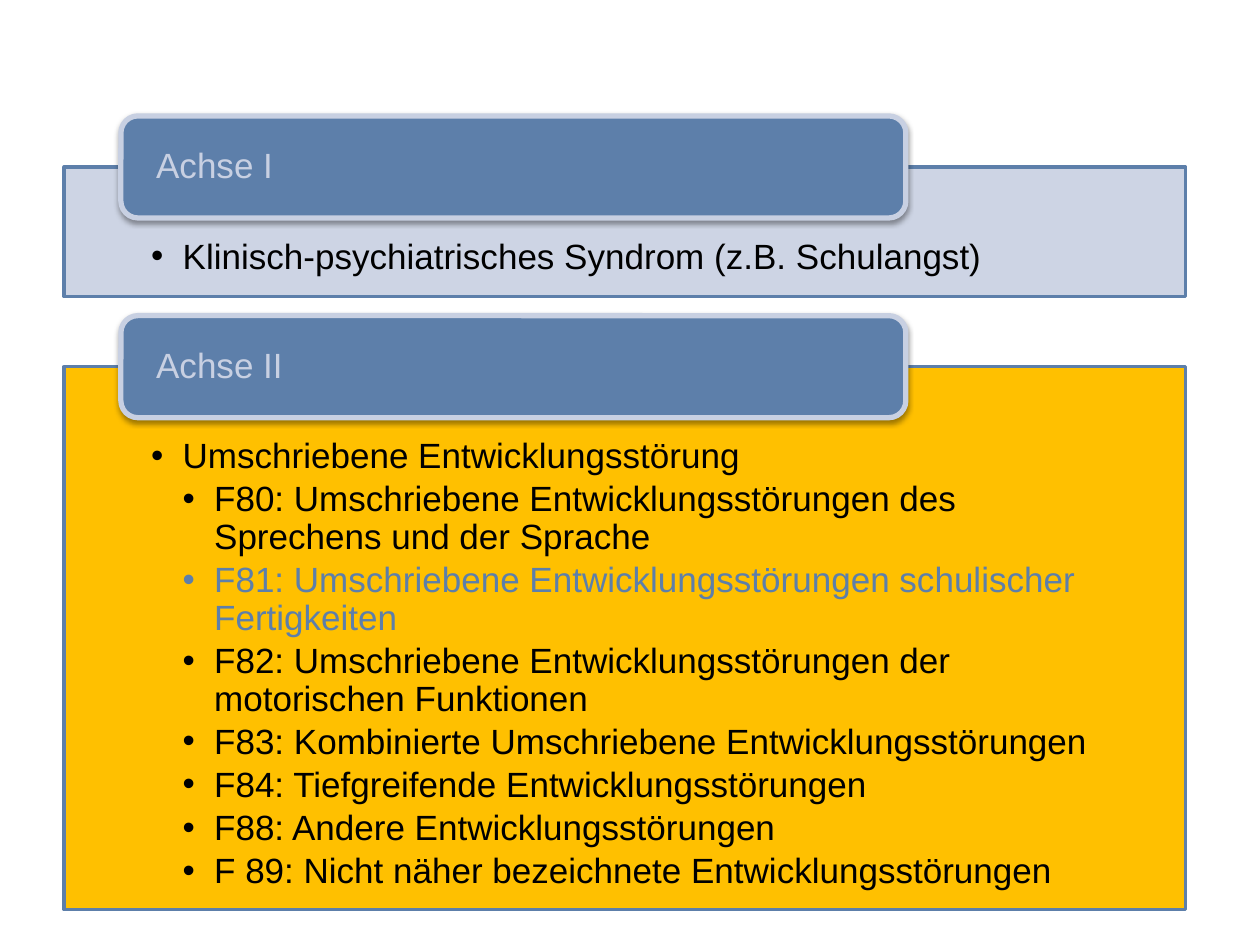
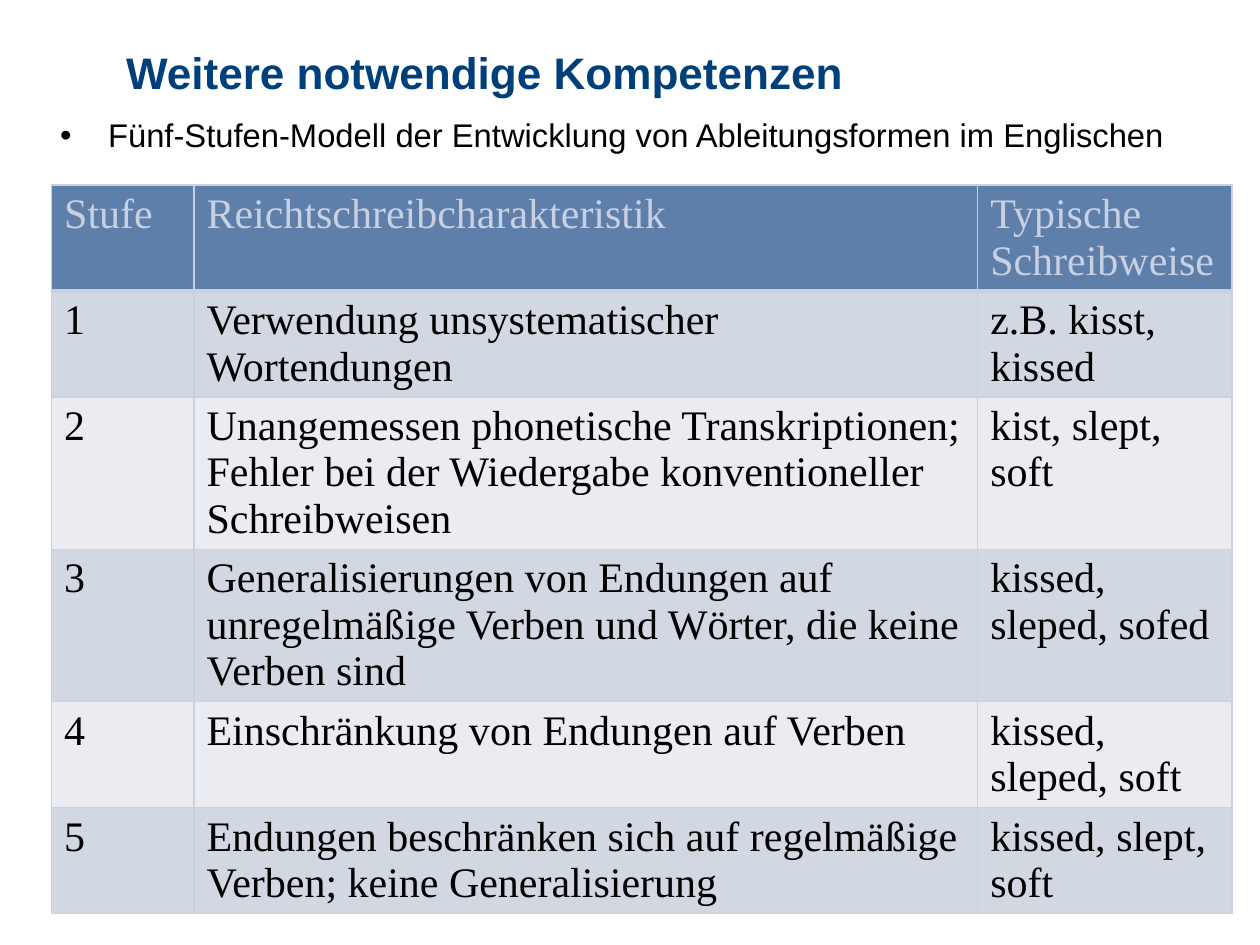
from lxml.etree import SubElement
from pptx import Presentation
from pptx.dml.color import RGBColor
from pptx.enum.shapes import MSO_SHAPE as Preset
from pptx.enum.text import MSO_ANCHOR as Anchor, MSO_AUTO_SIZE as AutoSize, PP_ALIGN as Align
from pptx.oxml import parse_xml
from pptx.oxml.ns import nsdecls, qn
from pptx.util import Inches, Pt

BLUE, PALE, GOLD, NAVY, BLACK = "5D7FAA", "C8D0E2", "FFC000", "00407A", "000000"
ROW_FILLS = ("D2D8E2", "EAECF1")
SANS, SERIF = "Arial", "Times New Roman"
COLUMNS, ROWS = 100, 75  # grid over the whole slide


def colour(value):
    return RGBColor.from_string(value)


class Deck:
    """Holds the style, the grid and the current slide."""

    def __init__(self):
        self.presentation = Presentation()
        self.presentation.slide_width = Inches(10)
        self.presentation.slide_height = Inches(7.5)
        self.slide = None

    def new_slide(self, layout):
        self.slide = self.presentation.slides.add_slide(self.presentation.slide_layouts[layout])

    def across(self, columns):
        return round(self.presentation.slide_width * columns / COLUMNS)

    def down(self, rows):
        return round(self.presentation.slide_height * rows / ROWS)

    def area(self, left, top, width, height):
        return self.across(left), self.down(top), self.across(width), self.down(height)

    def frame(self, holder, insets, anchor):
        """Set up a text frame; insets are left, top, right, bottom in grid units."""
        frame = holder.text_frame
        frame.word_wrap = True
        frame.auto_size = AutoSize.NONE
        frame.vertical_anchor = anchor
        left, top, right, bottom = insets
        frame.margin_left, frame.margin_right = self.across(left), self.across(right)
        frame.margin_top, frame.margin_bottom = self.down(top), self.down(bottom)
        return frame

    def add_text(self, paragraph, text, size, ink=BLACK, font=SANS, bold=False):
        paragraph.alignment = Align.LEFT
        run = paragraph.add_run()
        run.text = text
        run.font.name, run.font.size, run.font.bold = font, Pt(size), bold
        run.font.color.rgb = colour(ink)

    def bullet(self, paragraph, indent, hang):
        properties = paragraph._p.get_or_add_pPr()
        properties.set("marL", str(self.across(indent)))
        properties.set("indent", str(-self.across(hang)))
        SubElement(properties, qn("a:buFont")).set("typeface", SANS)
        SubElement(properties, qn("a:buChar")).set("char", "•")

    def shape(self, preset, area, fill, line, line_width):
        shape = self.slide.shapes.add_shape(preset, *self.area(*area))
        shape.shadow.inherit = False
        shape.fill.solid()
        shape.fill.fore_color.rgb = colour(fill)
        shape.line.color.rgb = colour(line)
        shape.line.width = Pt(line_width)
        return shape

    def panel(self, top, height, fill, items, opacity=100):
        """Draw a framed list of (level, text, ink) items."""
        shape = self.shape(Preset.RECTANGLE, (5.1, top, 89, height), fill, BLUE, 2)
        if opacity < 100:
            solid = shape._element.spPr.find(qn("a:solidFill"))
            SubElement(solid[0], qn("a:alpha")).set("val", str(opacity * 1000))
        frame = self.frame(shape, (6.9, 5.7, 6.9, 1.6), Anchor.TOP)
        for index, (level, text, ink) in enumerate(items):
            paragraph = frame.add_paragraph() if index else frame.paragraphs[0]
            self.bullet(paragraph, 2.5 * level, 2.5)
            paragraph.line_spacing = 0.9
            paragraph.space_after = Pt(3)
            self.add_text(paragraph, text, 20, ink)

    def tab(self, top, height, text):
        shape = self.shape(Preset.ROUNDED_RECTANGLE, (9.6, top, 62.3, height), BLUE, PALE, 3)
        effects = shape._element.spPr.find(qn("a:effectLst"))
        effects.append(parse_xml(
            f'<a:outerShdw {nsdecls("a")} blurRad="{Pt(3.1)}" dist="{Pt(1.6)}" dir="5400000"'
            f' rotWithShape="0"><a:srgbClr val="{BLACK}"><a:alpha val="38000"/>'
            '</a:srgbClr></a:outerShdw>'))
        frame = self.frame(shape, (2.4, 0, 2.4, 0), Anchor.MIDDLE)
        frame.paragraphs[0].line_spacing = 0.9
        self.add_text(frame.paragraphs[0], text, 20, PALE)

    def title(self, text, area):
        title = self.slide.shapes.title
        title.left, title.top, title.width, title.height = self.area(*area)
        frame = self.frame(title, (1, 0.5, 1, 0.5), Anchor.MIDDLE)
        self.add_text(frame.paragraphs[0], text, 25.2, NAVY, bold=True)

    def lead(self, text, area):
        box = self.slide.shapes.add_textbox(*self.area(*area))
        paragraph = self.frame(box, (1, 0.5, 1, 0.5), Anchor.MIDDLE).paragraphs[0]
        self.bullet(paragraph, 3.8, 3.8)
        self.add_text(paragraph, text, 18.7)

    def borders(self, cell, bottom_width):
        properties = cell._tc.get_or_add_tcPr()
        widths = {"lnL": 1, "lnR": 1, "lnT": 1, "lnB": bottom_width}
        for index, (side, width) in enumerate(widths.items()):
            properties.insert(index, parse_xml(
                f'<a:{side} {nsdecls("a")} w="{Pt(width)}"><a:solidFill>'
                f'<a:srgbClr val="{PALE}"/></a:solidFill></a:{side}>'))

    def table(self, left, top, widths, heights, records):
        area = self.area(left, top, sum(widths), sum(heights))
        table = self.slide.shapes.add_table(len(records), len(widths), *area).table
        for column, width in zip(table.columns, widths):
            column.width = self.across(width)
        for index, (row, height, record) in enumerate(zip(table.rows, heights, records)):
            row.height = self.down(height)
            header = index == 0
            for cell, text in zip(row.cells, record):
                cell.fill.solid()
                cell.fill.fore_color.rgb = colour(BLUE if header else ROW_FILLS[(index - 1) % 2])
                self.borders(cell, 3 if header else 1)
                self.add_text(cell.text_frame.paragraphs[0], text, 24,
                              PALE if header else BLACK, SERIF)


# Content: name, panel height, fill, opacity and list of each axis
AXES = [
    ("Achse I", 10.3, PALE, 90, [
        (1, "Klinisch-psychiatrisches Syndrom (z.B. Schulangst)", BLACK),
    ]),
    ("Achse II", 43.1, GOLD, 100, [
        (1, "Umschriebene Entwicklungsstörung", BLACK),
        (2, "F80: Umschriebene Entwicklungsstörungen des Sprechens und der Sprache", BLACK),
        (2, "F81: Umschriebene Entwicklungsstörungen schulischer Fertigkeiten", BLUE),
        (2, "F82: Umschriebene Entwicklungsstörungen der motorischen Funktionen", BLACK),
        (2, "F83: Kombinierte Umschriebene Entwicklungsstörungen", BLACK),
        (2, "F84: Tiefgreifende Entwicklungsstörungen", BLACK),
        (2, "F88: Andere Entwicklungsstörungen", BLACK),
        (2, "F 89: Nicht näher bezeichnete Entwicklungsstörungen", BLACK),
    ]),
]

# Content: table of stages, with the text lines each row holds
STAGES = [
    ("Stufe", "Reichtschreibcharakteristik", "Typische Schreibweise"),
    ("1", "Verwendung unsystematischer Wortendungen", "z.B. kisst, kissed"),
    ("2", "Unangemessen phonetische Transkriptionen; Fehler bei der Wiedergabe "
          "konventioneller Schreibweisen", "kist, slept, soft"),
    ("3", "Generalisierungen von Endungen auf unregelmäßige Verben und Wörter, "
          "die keine Verben sind", "kissed, sleped, sofed"),
    ("4", "Einschränkung von Endungen auf Verben", "kissed, sleped, soft"),
    ("5", "Endungen beschränken sich auf regelmäßige Verben; keine Generalisierung",
     "kissed, slept, soft"),
]
STAGE_LINES = (2, 2, 3, 3, 2, 2)


def axes_slide(deck):
    deck.new_slide(6)
    tab_top, tab_height, gap = 9.2, 8.1, 1.5
    for name, height, fill, opacity, items in AXES:
        panel_top = tab_top + tab_height / 2  # the tab straddles the panel's top edge
        deck.panel(panel_top, height, fill, items, opacity)
        deck.tab(tab_top, tab_height, name)
        tab_top = panel_top + height + gap


def stages_slide(deck):
    deck.new_slide(5)
    deck.title("Weitere notwendige Kompetenzen", (9, 3.1, 82.5, 5.2))
    deck.lead("Fünf-Stufen-Modell der Entwicklung von Ableitungsformen im Englischen",
              (3.8, 8.4, 93.4, 4.6))
    heights = [1 + 3.7 * lines for lines in STAGE_LINES]
    deck.table(4.1, 14.7, (11.3, 62.2, 20.2), heights, STAGES)


def main():
    deck = Deck()
    axes_slide(deck)
    stages_slide(deck)
    deck.presentation.save("out.pptx")


if __name__ == "__main__":
    main()
